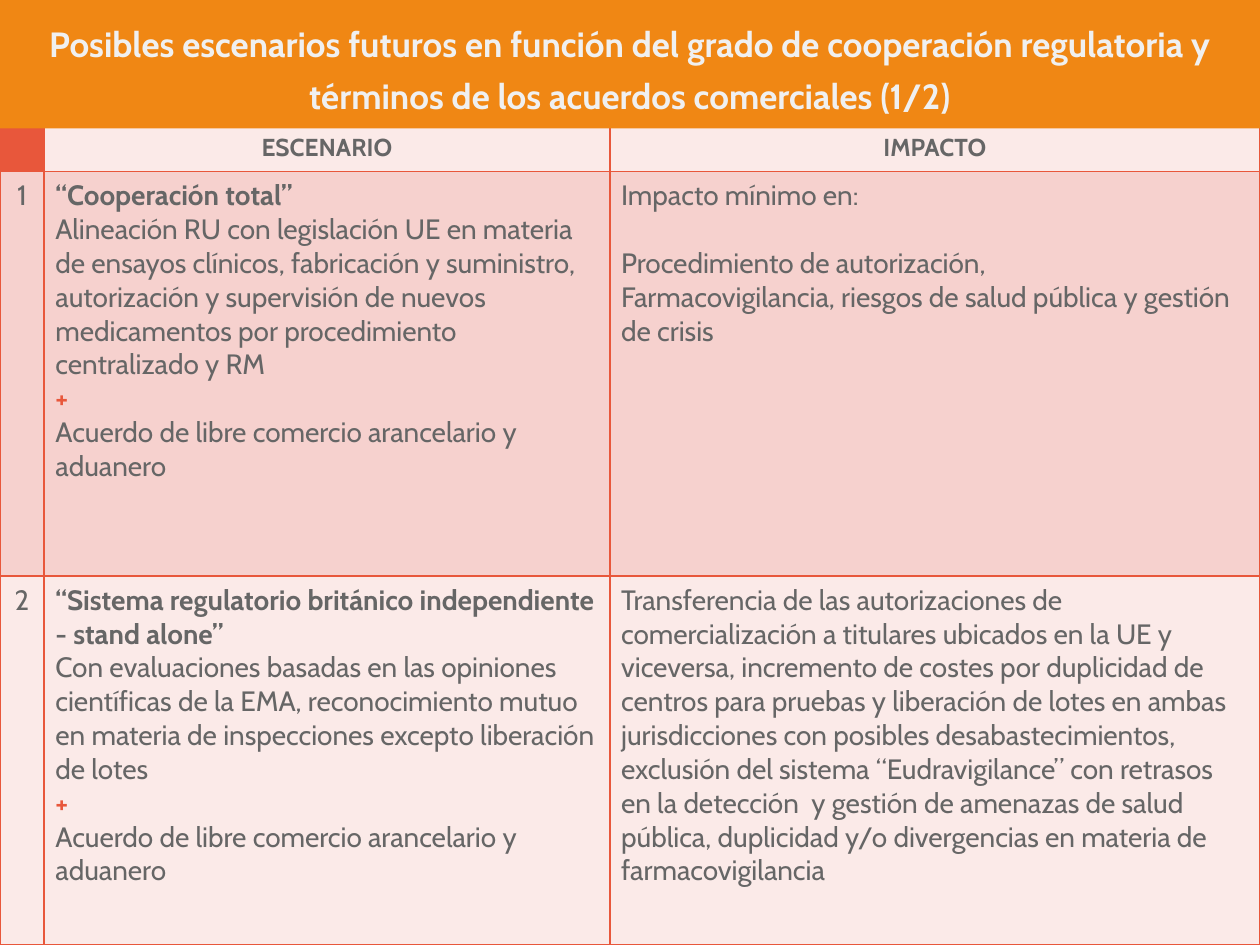
from dataclasses import dataclass
from itertools import product

from lxml import etree
from pptx import Presentation
from pptx.dml.color import RGBColor
from pptx.enum.text import MSO_ANCHOR, MSO_AUTO_SIZE, PP_ALIGN
from pptx.oxml.ns import qn
from pptx.util import Inches, Pt

CENTER, LEFT = PP_ALIGN.CENTER, PP_ALIGN.LEFT
MIDDLE, TOP = MSO_ANCHOR.MIDDLE, MSO_ANCHOR.TOP
NO_AUTOFIT = MSO_AUTO_SIZE.NONE
TITLE_ONLY = 5
WIDTH, HEIGHT = 10, 7.5
BORDER_SIDES = ("lnL", "lnR", "lnT", "lnB")

TITLE = ("Posibles escenarios futuros en función del grado de cooperación "
         "regulatoria y términos de los acuerdos comerciales (1/2)")
PLUS = "+"
TRADE_DEAL = "Acuerdo de libre comercio arancelario y aduanero"
HEADINGS = ("", "ESCENARIO", "IMPACTO")
SCENARIOS = (
    ("“Cooperación total”",
     "Alineación RU con legislación UE en materia de ensayos clínicos, "
     "fabricación y suministro, autorización y supervisión de nuevos "
     "medicamentos por procedimiento centralizado y RM",
     ("Impacto mínimo en:",
      "Procedimiento de autorización,",
      "Farmacovigilancia, riesgos de salud pública y gestión de crisis")),
    ("“Sistema regulatorio británico independiente - stand alone”",
     "Con evaluaciones basadas en las opiniones científicas de la EMA, "
     "reconocimiento mutuo en materia de inspecciones excepto liberación de lotes",
     ("Transferencia de las autorizaciones de comercialización a titulares "
      "ubicados en la UE y viceversa, incremento de costes por duplicidad de "
      "centros para pruebas y liberación de lotes en ambas jurisdicciones con "
      "posibles desabastecimientos, exclusión del sistema “Eudravigilance” con "
      "retrasos en la detección  y gestión de amenazas de salud pública, "
      "duplicidad y/o divergencias en materia de farmacovigilancia",)),
)
COLUMNS = (0.35, 4.49, 5.16)
ROWS = (0.37, 3.21, 2.93)


def rgb(value):
    return RGBColor.from_string(value)


@dataclass
class ScenarioSlide:
    slide: object
    font: str = "Cabin"
    ink: str = "666666"
    accent: str = "E8573B"
    banner: str = "F08714"
    banner_ink: str = "F0F0F0"
    pale: str = "FBEAE8"
    rose: str = "F6D1CE"

    def style(self, paragraph, size, color, bold=False, align=LEFT):
        paragraph.alignment = align
        font = paragraph.font
        font.name, font.size, font.bold = self.font, Pt(size), bold
        font.color.rgb = rgb(color)

    def title(self, text, height):
        banner = self.slide.shapes.title
        banner.left = banner.top = 0
        banner.width, banner.height = Inches(WIDTH), Inches(height)
        banner.fill.solid()
        banner.fill.fore_color.rgb = rgb(self.banner)
        frame = banner.text_frame
        frame.text = text
        frame.word_wrap = True
        frame.auto_size = NO_AUTOFIT
        frame.vertical_anchor = MIDDLE
        heading = frame.paragraphs[0]
        heading.line_spacing = Pt(30)
        self.style(heading, 20, self.banner_ink, True, CENTER)
        banner.element.getparent().append(banner.element)

    def table(self, top, columns, rows):
        frame = self.slide.shapes.add_table(
            len(rows), len(columns), 0, Inches(top), Inches(WIDTH), Inches(sum(rows)))
        grid = frame.table
        grid.first_row = grid.horz_banding = False
        for column, width in zip(grid.columns, columns):
            column.width = Inches(width)
        for row, height in zip(grid.rows, rows):
            row.height = Inches(height)
        return grid

    def cell(self, cell, lines, fill, size=16, bold=False, align=LEFT, anchor=TOP):
        self.borders(cell)
        cell.fill.solid()
        cell.fill.fore_color.rgb = rgb(fill)
        cell.vertical_anchor = anchor
        cell.margin_left = cell.margin_right = Inches(0.09)
        cell.margin_top = cell.margin_bottom = Inches(0.06 if lines[0] else 0)
        cell.text_frame.text = "\n".join(lines)
        for paragraph in cell.text_frame.paragraphs:
            plus = paragraph.text == PLUS
            self.style(paragraph, size, self.accent if plus else self.ink,
                       bold or plus, align)
        return cell.text_frame.paragraphs

    def borders(self, cell):
        properties = cell._tc.get_or_add_tcPr()
        for side in BORDER_SIDES:
            line = etree.SubElement(properties, qn(f"a:{side}"), w=str(Pt(1)))
            solid = etree.SubElement(line, qn("a:solidFill"))
            etree.SubElement(solid, qn("a:srgbClr"), val=self.accent)


def main():
    deck = Presentation()
    deck.slide_width, deck.slide_height = Inches(WIDTH), Inches(HEIGHT)
    page = ScenarioSlide(deck.slides.add_slide(deck.slide_layouts[TITLE_ONLY]))

    grid = page.table(HEIGHT - sum(ROWS), COLUMNS, ROWS)
    for column, heading in enumerate(HEADINGS):
        page.cell(grid.cell(0, column), [heading],
                  page.pale if heading else page.accent, 14, True, CENTER, MIDDLE)

    fills = (page.rose, page.pale)
    for number, (scenario, fill) in enumerate(zip(SCENARIOS, fills), 1):
        name, description, impacts = scenario
        page.cell(grid.cell(number, 0), [str(number)], fill, align=CENTER)
        summary = page.cell(grid.cell(number, 1),
                            [name, description, PLUS, TRADE_DEAL], fill)
        summary[0].font.bold = True
        effects = page.cell(grid.cell(number, 2), impacts, fill)
        if len(effects) > 1:
            effects[1].space_before = Pt(19.4)

    page.title(TITLE, 1.02)
    deck.save("out.pptx")


if __name__ == "__main__":
    main()
